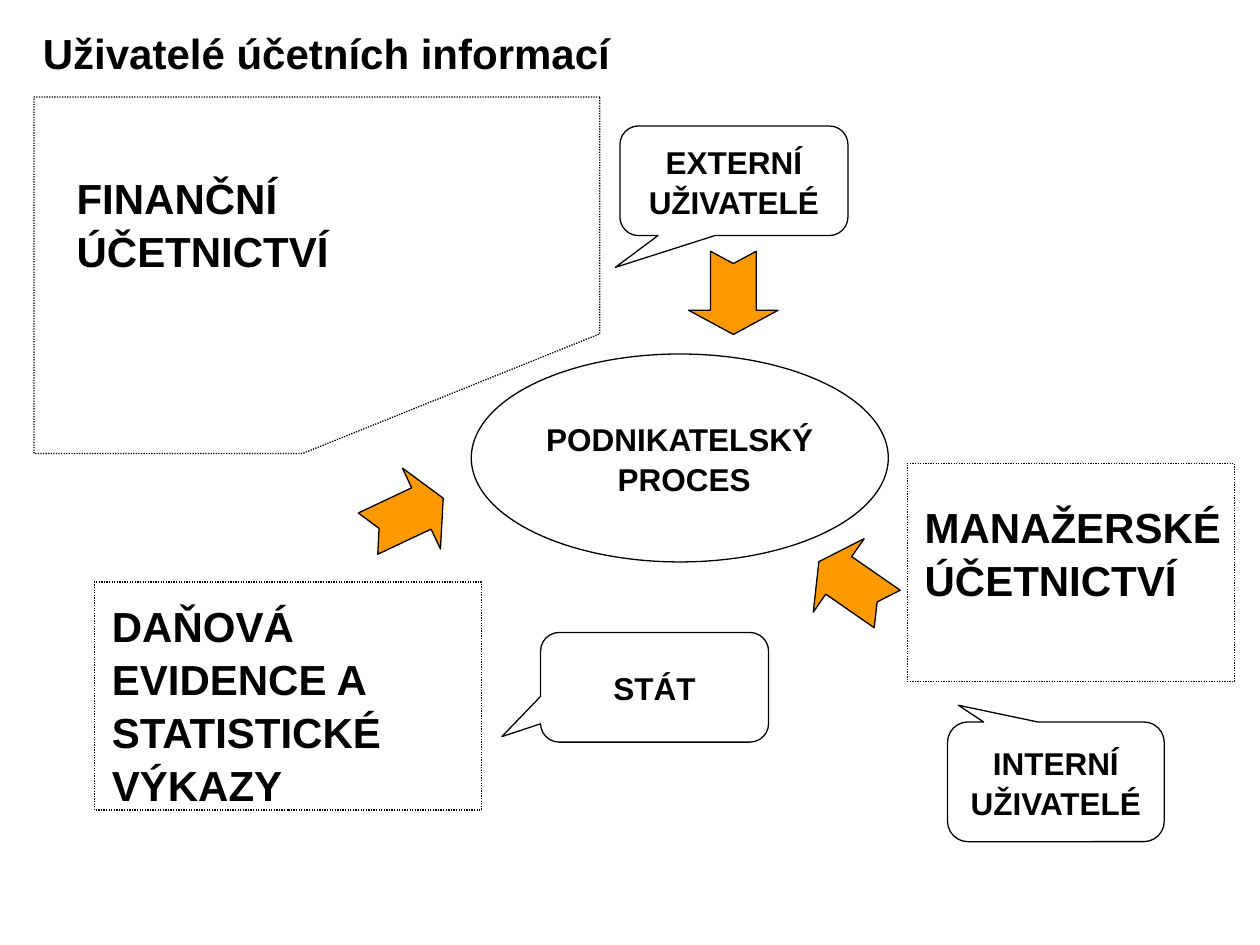
from pptx import Presentation
from pptx.dml.color import RGBColor
from pptx.enum.dml import MSO_LINE
from pptx.enum.shapes import MSO_SHAPE
from pptx.enum.text import MSO_ANCHOR, PP_ALIGN
from pptx.util import Inches, Pt

OVAL, RECT = MSO_SHAPE.OVAL, MSO_SHAPE.RECTANGLE
CALLOUT = MSO_SHAPE.ROUNDED_RECTANGULAR_CALLOUT
ARROW = MSO_SHAPE.NOTCHED_RIGHT_ARROW
DOTS = MSO_LINE.ROUND_DOT
MIDDLE, TOP = MSO_ANCHOR.MIDDLE, MSO_ANCHOR.TOP
LEFT, CENTER = PP_ALIGN.LEFT, PP_ALIGN.CENTER
COLORS = {"ink": "000000", "arrow": "FF9900"}


def outline(shape, dash=None, fill=None):
    shape.shadow.inherit = False
    if fill:
        shape.fill.solid()
        shape.fill.fore_color.rgb = RGBColor.from_string(COLORS[fill])
    else:
        shape.fill.background()
    shape.line.color.rgb = RGBColor.from_string(COLORS["ink"])
    shape.line.width = Pt(0.75)
    if dash:
        shape.line.dash_style = dash


def write(shape, lines, size, align, anchor, side=0.1, gap=1.05):
    frame = shape.text_frame
    frame.text = "\n".join(lines)
    form = {"word_wrap": True, "vertical_anchor": anchor,
            "margin_left": Inches(side), "margin_right": Inches(side),
            "margin_top": Inches(0.05), "margin_bottom": Inches(0.05)}
    for name, value in form.items():
        setattr(frame, name, value)
    for para in frame.paragraphs:
        para.alignment = align
        para.line_spacing = gap
        para.space_before = Pt(0)
        for run in para.runs:
            for name, value in {"name": "Arial", "size": Pt(size), "bold": True}.items():
                setattr(run.font, name, value)
            run.font.color.rgb = RGBColor.from_string(COLORS["ink"])


prs = Presentation()
prs.slide_width, prs.slide_height = Inches(10), Inches(7.5)
slide = prs.slides.add_slide(prs.slide_layouts[5])
shapes = slide.shapes

# Title
title = shapes.title
place = {"left": 0.34, "top": 0.11, "width": 9.25, "height": 0.66}
for name, value in place.items():
    setattr(title, name, Inches(value))
write(title, ["Uživatelé účetních informací"], 24, LEFT, MIDDLE, side=0, gap=0.95)

# Business process in the middle
oval = shapes.add_shape(OVAL, *map(Inches, (3.74, 2.81, 3.31, 1.65)))
outline(oval)
write(oval, ["PODNIKATELSKÝ", " PROCES"], 18, CENTER, MIDDLE, side=0.05)

# Dotted frames of the accounting areas
for box in [(0.75, 4.62, 3.07, 1.81), (7.2, 3.68, 2.6, 1.73)]:
    outline(shapes.add_shape(RECT, *map(Inches, box)), DOTS)

corners = [(4.76, 0.77), (0.27, 0.77), (0.27, 3.6), (2.4, 3.6), (4.76, 2.65)]
points = [(Inches(x), Inches(y)) for x, y in corners]
pen = shapes.build_freeform(*points[0])
pen.add_line_segments(points[1:], close=True)
outline(pen.convert_to_shape(), DOTS)

# Callouts with the users: text, box, tip of the pointer
users = [
    ("EXTERNÍ UŽIVATELÉ", (4.92, 1, 1.81, 0.87), (-0.52, 0.79)),
    ("STÁT", (4.29, 5.02, 1.81, 0.87), (-0.67, 0.45)),
    ("INTERNÍ UŽIVATELÉ", (7.52, 5.73, 1.72, 0.95), (-0.45, -0.64)),
]
for text, box, tip in users:
    bubble = shapes.add_shape(CALLOUT, *map(Inches, box))
    for i, value in enumerate((*tip, 0.17)):
        bubble.adjustments[i] = value
    outline(bubble)
    write(bubble, [text], 18, CENTER, MIDDLE)

# Arrows towards the process
for left, top, angle in [(5.49, 1.97, 90), (2.89, 3.74, 334.8), (6.44, 4.29, 214.7)]:
    arrow = shapes.add_shape(ARROW, *map(Inches, (left, top, 0.66, 0.71)))
    arrow.adjustments[0], arrow.adjustments[1] = 0.51, 0.29
    arrow.rotation = angle
    outline(arrow, fill="arrow")

# Names of the accounting areas
areas = [
    ("FINANČNÍ ÚČETNICTVÍ", (0.51, 1.3, 3.84, 0.91)),
    ("MANAŽERSKÉ ÚČETNICTVÍ", (7.24, 3.91, 2.76, 0.91)),
    ("DAŇOVÁ EVIDENCE A STATISTICKÉ VÝKAZY", (0.79, 4.7, 2.76, 1.72)),
]
for text, box in areas:
    label = shapes.add_textbox(*map(Inches, box))
    write(label, [text], 24, LEFT, TOP)

prs.save("out.pptx")
